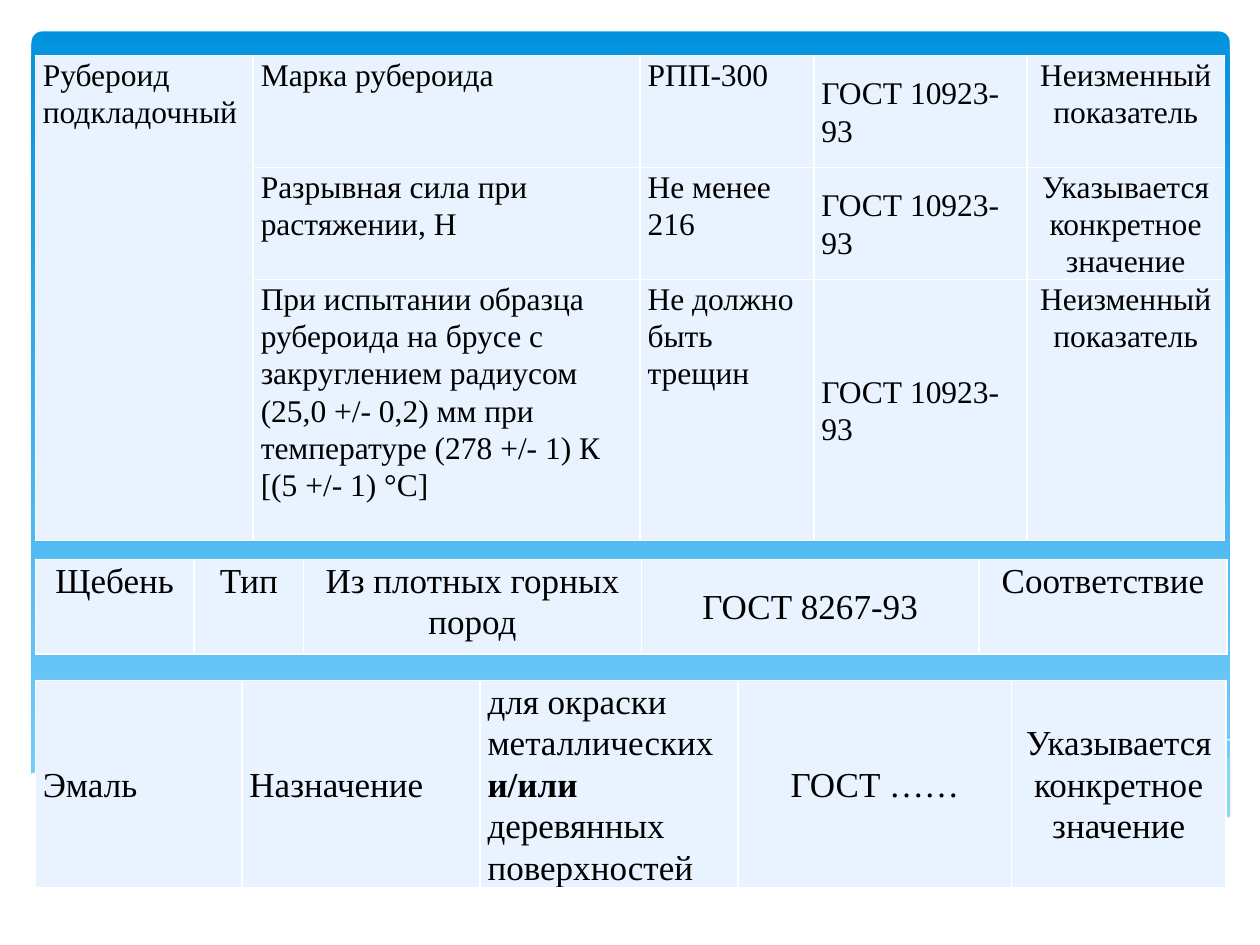
"""Build a slide with three tables of building material requirements."""
from lxml import etree
from pptx import Presentation
from pptx.dml.color import RGBColor
from pptx.enum.shapes import MSO_SHAPE
from pptx.enum.text import MSO_ANCHOR, PP_ALIGN
from pptx.oxml.ns import qn
from pptx.util import Inches, Pt

LEFT, CENTER = PP_ALIGN.LEFT, PP_ALIGN.CENTER
TOP, MIDDLE = MSO_ANCHOR.TOP, MSO_ANCHOR.MIDDLE
FONT = "Times New Roman"
COLORS = {
    "gradient_top": "0293E0",
    "gradient_bottom": "83D3FE",
    "wave": "C6E7FC",
    "white": "FFFFFF",
    "cell": "E8F3FF",
    "text": "000000",
}
TABLE_LEFT, TABLE_WIDTH = 0.28, 9.45

RIGHT_WAVE = [
    (9.77, 6.01), (9.36, 6.09), (8.92, 6.18), (8.34, 6.32), (7.8, 6.44),
    (7.3, 6.55), (6.62, 6.67), (7.06, 6.73), (7.58, 6.78), (8.04, 6.8),
    (8.55, 6.78), (8.98, 6.72), (9.37, 6.63), (9.77, 6.49),
]
MIDDLE_WAVE = [
    (8.94, 6.75), (8.38, 6.67), (7.76, 6.56), (7.07, 6.42), (6.3, 6.24),
    (5.7, 6.1), (5.15, 6), (4.65, 5.93), (4.2, 5.89), (3.8, 5.87),
    (3.28, 5.89), (2.87, 5.93), (3.43, 6.01), (4.05, 6.13), (4.91, 6.34),
    (5.67, 6.5), (6.35, 6.63), (6.96, 6.72), (7.49, 6.78), (7.97, 6.8),
    (8.49, 6.79), (8.94, 6.75),
]
LONG_LINE = [
    (3.1, 5.97), (3.44, 5.92), (3.88, 5.89), (4.33, 5.89), (4.89, 5.92),
    (5.57, 5.98), (6.37, 6.1), (7.28, 6.28), (8.32, 6.52), (9.08, 6.73),
]
SHORT_LINE = [
    (6.14, 6.59), (6.73, 6.43), (7.49, 6.25), (8.07, 6.12), (8.67, 6),
    (9.11, 5.94), (9.52, 5.89), (9.76, 5.87),
]
WHITE_WAVE = [
    (9.77, 6.48), (9.4, 6.61), (8.99, 6.71), (8.5, 6.77), (8.09, 6.79),
    (7.61, 6.77), (7.08, 6.72), (6.48, 6.64), (5.79, 6.51), (5.03, 6.35),
    (4.18, 6.15), (3.65, 6.04), (3.16, 5.96), (2.71, 5.9), (2.3, 5.87),
    (1.93, 5.86), (1.46, 5.87), (1.06, 5.91), (0.76, 5.97), (0.46, 6.05),
    (0.23, 6.15), (0.23, 7.31), (9.77, 7.31),
]


def rgb(name):
    return RGBColor.from_string(COLORS[name])


def set_solid_fill(fill, color):
    fill.solid()
    fill.fore_color.rgb = rgb(color)


def add_background_panel(slide):
    panel = slide.shapes.add_shape(
        MSO_SHAPE.ROUNDED_RECTANGLE,
        Inches(0.25), Inches(0.25), Inches(9.51), Inches(6.6),
    )
    panel.adjustments[0] = 0.013
    panel.shadow.inherit = False
    panel.line.fill.background()
    panel.fill.gradient()
    panel.fill.gradient_angle = 270
    stops = panel.fill.gradient_stops
    for stop, position, color in zip(stops, (0, 1), ("gradient_top", "gradient_bottom")):
        stop.position = position
        stop.color.rgb = rgb(color)


def add_curve(slide, points, fill=None, opacity=100, line=None):
    start, *others = [(Inches(x), Inches(y)) for x, y in points]
    builder = slide.shapes.build_freeform(*start)
    builder.add_line_segments(others, close=fill is not None)
    shape = builder.convert_to_shape()
    shape.shadow.inherit = False
    if fill:
        set_solid_fill(shape.fill, fill)
        color = shape._element.spPr.find(f"{qn('a:solidFill')}/{qn('a:srgbClr')}")
        etree.SubElement(color, qn("a:alpha"), val=str(opacity * 1000))
    else:
        shape.fill.background()
    if line:
        shape.line.color.rgb = rgb(line)
        shape.line.width = 0
    else:
        shape.line.fill.background()


def set_borders(cell, color="white", width=1):
    properties = cell._tc.get_or_add_tcPr()
    for index, side in enumerate(("lnL", "lnR", "lnT", "lnB")):
        border = etree.Element(qn(f"a:{side}"), w=str(Pt(width)))
        fill = etree.SubElement(border, qn("a:solidFill"))
        etree.SubElement(fill, qn("a:srgbClr"), val=COLORS[color])
        properties.insert(index, border)


def write_text(cell, text, size=18, align=LEFT, anchor=TOP, space_after=0):
    """Write text into a cell; every second part between asterisks is bold."""
    cell.vertical_anchor = anchor
    cell.margin_left = cell.margin_right = Inches(0.06)
    cell.margin_top = cell.margin_bottom = 0
    paragraph = cell.text_frame.paragraphs[0]
    paragraph.alignment = align
    paragraph.line_spacing = 1.07
    paragraph.space_after = Pt(space_after)
    for index, part in enumerate(text.split("*")):
        run = paragraph.add_run()
        run.text = part
        run.font.name = FONT
        run.font.size = Pt(size)
        run.font.bold = index % 2 == 1
        run.font.color.rgb = rgb("text")


def add_table(slide, top, widths, heights, rows, formats, size):
    frame = slide.shapes.add_table(
        len(heights), len(widths), Inches(TABLE_LEFT), Inches(top),
        Inches(TABLE_WIDTH), Inches(sum(heights)),
    )
    table = frame.table
    table.first_row = table.horz_banding = False
    for column, width in zip(table.columns, widths):
        column.width = Inches(width)
    for row, height in zip(table.rows, heights):
        row.height = Inches(height)
    for row, texts in zip(table.rows, rows):
        for cell, text, cell_format in zip(row.cells, texts, formats):
            set_solid_fill(cell.fill, "cell")
            set_borders(cell)
            if text:
                write_text(cell, text, size=size, **cell_format)
    return table


def cell_format(align=LEFT, anchor=TOP, space_after=8):
    return {"align": align, "anchor": anchor, "space_after": space_after}


def main():
    presentation = Presentation()
    presentation.slide_width, presentation.slide_height = Inches(10), Inches(7.5)
    slide = presentation.slides.add_slide(presentation.slide_layouts[6])

    add_background_panel(slide)
    add_curve(slide, RIGHT_WAVE, fill="wave", opacity=29)
    add_curve(slide, MIDDLE_WAVE, fill="wave", opacity=40)
    add_curve(slide, LONG_LINE, line="white")
    add_curve(slide, SHORT_LINE, line="white")
    add_curve(slide, WHITE_WAVE, fill="white")

    standard = "ГОСТ 10923-93"
    fixed = "Неизменный показатель"
    stated = "Указывается конкретное значение"
    roofing = add_table(
        slide, 0.44, [1.73, 3.07, 1.38, 1.69, 1.57], [0.89, 0.89, 2.07],
        [
            ["Рубероид подкладочный", "Марка рубероида", "РПП-300", standard, fixed],
            ["", "Разрывная сила при растяжении, Н", "Не менее 216", standard, stated],
            ["", "При испытании образца рубероида на брусе с закруглением радиусом "
             "(25,0 +/- 0,2) мм при температуре (278 +/- 1) К [(5 +/- 1) °С]",
             "Не должно быть трещин", standard, fixed],
        ],
        [cell_format(), cell_format(), cell_format(space_after=0),
         cell_format(anchor=MIDDLE, space_after=0),
         cell_format(align=CENTER, space_after=0)],
        size=18,
    )
    roofing.cell(0, 0).merge(roofing.cell(2, 0))

    centered = cell_format(align=CENTER)
    centered_middle = cell_format(align=CENTER, anchor=MIDDLE)
    add_table(
        slide, 4.44, [1.26, 0.87, 2.68, 2.68, 1.97], [0.75],
        [["Щебень", "Тип", "Из плотных горных пород", "ГОСТ 8267-93", "Соответствие"]],
        [centered, centered, centered, centered_middle, centered],
        size=20,
    )
    add_table(
        slide, 5.4, [1.64, 1.89, 2.05, 2.17, 1.7], [1.64],
        [["Эмаль", "Назначение",
          "для окраски металлических *и/или* деревянных поверхностей",
          "ГОСТ ……", stated]],
        [cell_format(anchor=MIDDLE)] * 3
        + [centered_middle, cell_format(align=CENTER, anchor=MIDDLE, space_after=0)],
        size=20,
    )
    presentation.save("out.pptx")


if __name__ == "__main__":
    main()
